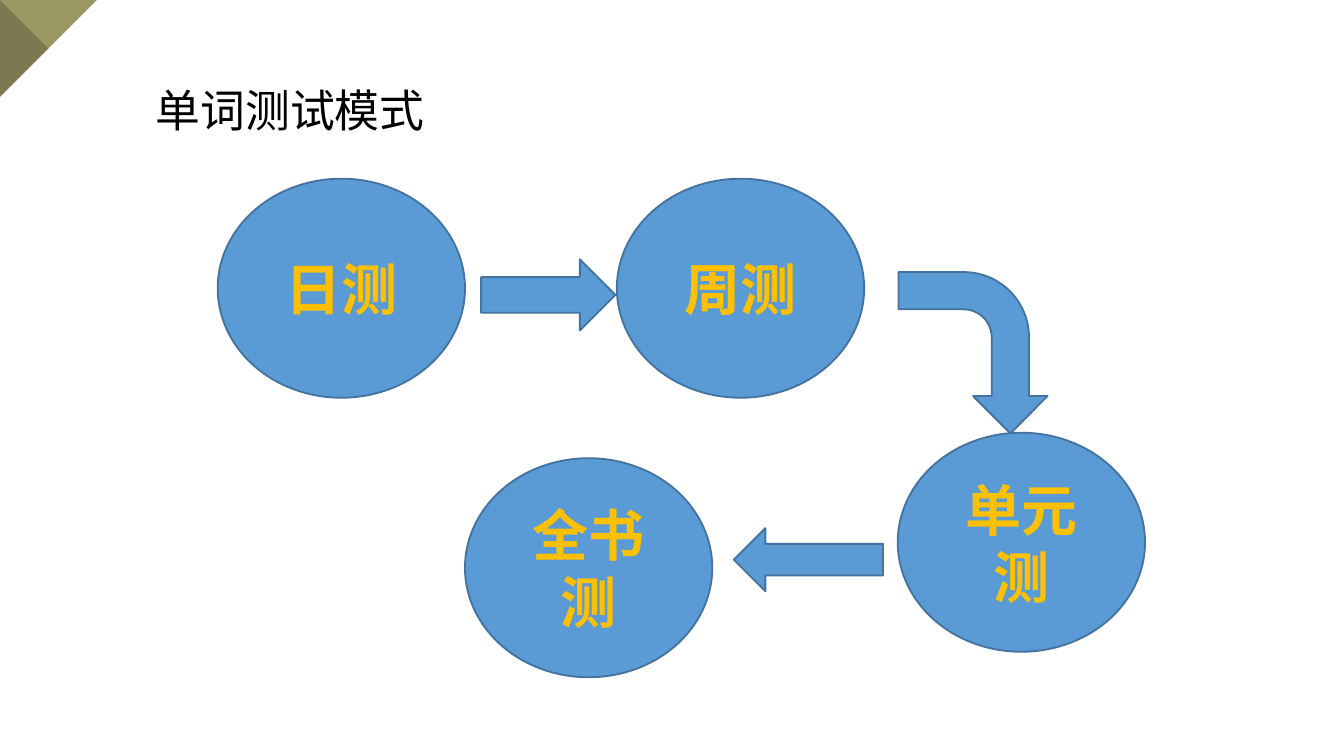
from dataclasses import dataclass

import pptx
import pptx.dml.color
import pptx.enum.shapes
import pptx.enum.text
import pptx.util
from pptx.util import Inches

SHAPES = pptx.enum.shapes.MSO_SHAPE
FONT = "Calibri"
BLUE, BLUE_EDGE = "5B9BD5", "43739E"
CIRCLE_SIZE = (1.84, 1.63)
LABEL_FORMAT = {"name": FONT, "size": pptx.util.Pt(30), "bold": True}
TITLE_FORMAT = {"name": FONT, "size": pptx.util.Pt(24)}


@dataclass
class Stage:
    label: str
    left: float
    top: float


@dataclass
class Arrow:
    kind: int
    left: float
    top: float
    width: float
    height: float
    rotation: float = 0


STAGES = [
    Stage("日测", 1.62, 1.33),
    Stage("周测", 4.59, 1.33),
    Stage("单元测", 6.68, 3.22),
    Stage("全书测", 3.46, 3.41),
]
ARROWS = [
    Arrow(SHAPES.RIGHT_ARROW, 3.58, 1.93, 1, 0.53),
    Arrow(SHAPES.BENT_ARROW, 6.64, 2.07, 1.2, 1.11, 90),
    Arrow(SHAPES.LEFT_ARROW, 5.46, 3.93, 1.11, 0.47),
]


def color(hex_value: str) -> pptx.dml.color.RGBColor:
    return pptx.dml.color.RGBColor.from_string(hex_value)


def paint(shape, fill: str, edge: str | None = None) -> None:
    shape.shadow.inherit = False
    shape.fill.solid()
    shape.fill.fore_color.rgb = color(fill)
    if edge:
        shape.line.color.rgb = color(edge)
        shape.line.width = pptx.util.Pt(1)
    else:
        shape.line.fill.background()


def write(paragraph, text: str, font_format: dict, hex_value: str) -> None:
    run = paragraph.add_run()
    run.text = text
    for attribute, value in font_format.items():
        setattr(run.font, attribute, value)
    run.font.color.rgb = color(hex_value)


def draw_corner(slide) -> None:
    side, middle = Inches(0.72), Inches(0.36)
    triangle = slide.shapes.add_shape(SHAPES.RIGHT_TRIANGLE, 0, 0, side, side)
    triangle.rotation = 90
    paint(triangle, "9B9763")
    builder = slide.shapes.build_freeform(0, 0)
    builder.add_line_segments([(middle, middle), (0, side)], close=True)
    paint(builder.convert_to_shape(), "7C7950")


def draw_stage(slide, stage: Stage) -> None:
    circle = slide.shapes.add_shape(
        SHAPES.OVAL, Inches(stage.left), Inches(stage.top), *map(Inches, CIRCLE_SIZE))
    paint(circle, BLUE, BLUE_EDGE)
    frame = circle.text_frame
    frame.word_wrap = True
    frame.vertical_anchor = pptx.enum.text.MSO_ANCHOR.MIDDLE
    paragraph = frame.paragraphs[0]
    paragraph.alignment = pptx.enum.text.PP_ALIGN.CENTER
    write(paragraph, stage.label, LABEL_FORMAT, "FFC000")


def draw_arrow(slide, arrow: Arrow) -> None:
    shape = slide.shapes.add_shape(
        arrow.kind, Inches(arrow.left), Inches(arrow.top),
        Inches(arrow.width), Inches(arrow.height))
    shape.rotation = arrow.rotation
    paint(shape, BLUE, BLUE_EDGE)


def draw_title(slide, text: str) -> None:
    box = slide.shapes.add_textbox(Inches(1.06), Inches(0.57), Inches(2.2), Inches(0.5))
    box.text_frame.word_wrap = False
    box.text_frame.auto_size = pptx.enum.text.MSO_AUTO_SIZE.SHAPE_TO_FIT_TEXT
    write(box.text_frame.paragraphs[0], text, TITLE_FORMAT, "000000")


def main() -> None:
    presentation = pptx.Presentation()
    # Widescreen, 16 to 9
    presentation.slide_width = Inches(10)
    presentation.slide_height = Inches(10) * 9 // 16
    slide = presentation.slides.add_slide(presentation.slide_layouts[6])

    # Corner ornament and heading
    draw_corner(slide)
    draw_title(slide, "单词测试模式")

    # Test stages and the arrows between them
    for stage in STAGES:
        draw_stage(slide, stage)
    for arrow in ARROWS:
        draw_arrow(slide, arrow)

    presentation.save("out.pptx")


if __name__ == "__main__":
    main()
